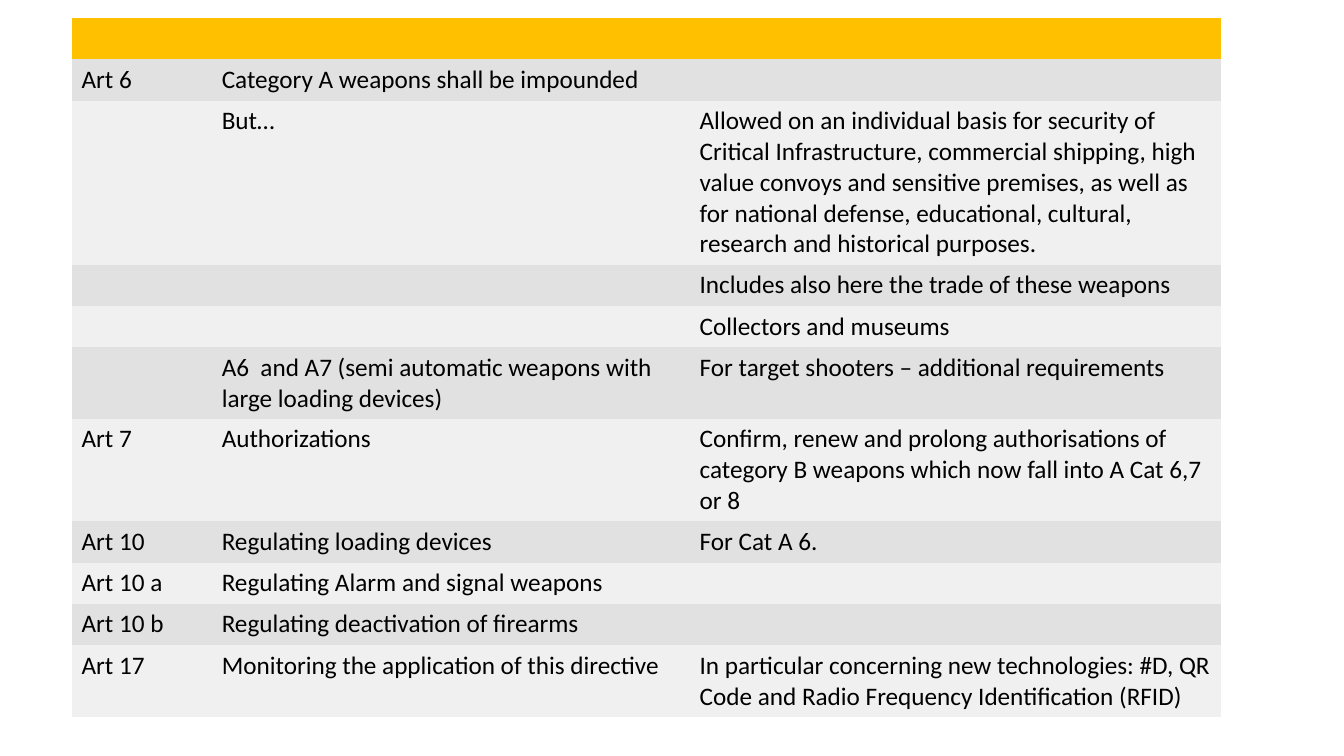
from pptx import Presentation
from pptx.dml.color import RGBColor
from pptx.oxml.ns import qn
from pptx.util import Inches, Pt

HEADER = ("", "", "")
ARTICLES = [
    ("Art 6", "Category A weapons shall be impounded", ""),
    ("", "But…",
     "Allowed on an individual basis for security of Critical Infrastructure, "
     "commercial shipping, high value convoys and sensitive premises, as well as "
     "for national defense, educational, cultural, research and historical purposes."),
    ("", "", "Includes also here the trade of these weapons"),
    ("", "", "Collectors and museums"),
    ("", "A6  and A7 (semi automatic weapons with large loading devices)",
     "For target shooters – additional requirements"),
    ("Art 7", "Authorizations",
     "Confirm, renew and prolong authorisations of category B weapons "
     "which now fall into A Cat 6,7 or 8"),
    ("Art 10", "Regulating loading devices", "For Cat A 6."),
    ("Art 10 a", "Regulating Alarm and signal weapons", ""),
    ("Art 10 b", "Regulating deactivation of firearms", ""),
    ("Art 17", "Monitoring the application of this directive",
     "In particular concerning new technologies: #D, QR Code and "
     "Radio Frequency Identification (RFID)"),
]

SLIDE_WIDTH, SLIDE_HEIGHT = 13.33, 7.5
LEFT, TOP = 0.71, 0.18
COLUMN_WIDTHS = (1.39, 4.74, 5.27)
ROW_HEIGHT = 0.41
HEADER_FILL = "FFC000"
BAND_FILLS = ("E1E1E1", "F0F0F0")
TEXT_COLOUR = "000000"
FONT_NAME, FONT_SIZE = "Calibri", 18
NO_GRID_STYLE = "{2D5ABB26-0587-4C30-8999-92F81FD0307C}"


def colour(hex_string):
    return RGBColor.from_string(hex_string)


def fill_cell(cell, words, fill):
    cell.fill.solid()
    cell.fill.fore_color.rgb = colour(fill)
    paragraph = cell.text_frame.paragraphs[0]
    paragraph.text = words
    paragraph.font.size = Pt(FONT_SIZE)
    for run in paragraph.runs:
        run.font.name = FONT_NAME
        run.font.size = Pt(FONT_SIZE)
        run.font.color.rgb = colour(TEXT_COLOUR)


def add_articles_table(slide):
    rows = [HEADER] + ARTICLES
    table = slide.shapes.add_table(
        len(rows), len(COLUMN_WIDTHS), Inches(LEFT), Inches(TOP),
        Inches(sum(COLUMN_WIDTHS)), Inches(ROW_HEIGHT * len(rows))).table
    table._tbl.tblPr.find(qn("a:tableStyleId")).text = NO_GRID_STYLE
    for column, width in zip(table.columns, COLUMN_WIDTHS):
        column.width = Inches(width)
    for index, (row, texts) in enumerate(zip(table.rows, rows)):
        row.height = Inches(ROW_HEIGHT)
        fill = BAND_FILLS[(index - 1) % 2] if index else HEADER_FILL
        for cell, words in zip(row.cells, texts):
            fill_cell(cell, words, fill)


def main():
    deck = Presentation()
    deck.slide_width = Inches(SLIDE_WIDTH)
    deck.slide_height = Inches(SLIDE_HEIGHT)
    blank_layout = deck.slide_layouts[6]
    add_articles_table(deck.slides.add_slide(blank_layout))
    deck.save("out.pptx")


if __name__ == "__main__":
    main()
